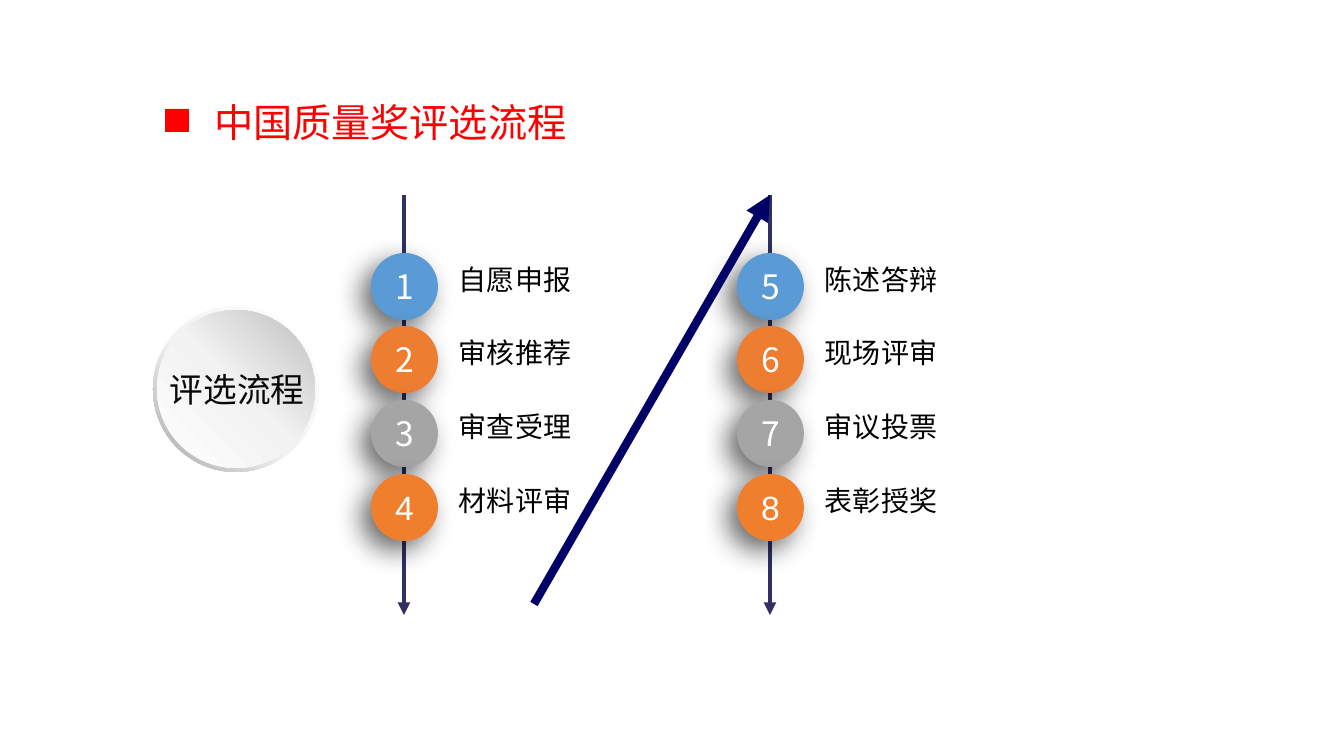
import pptx
import pptx.dml.color
import pptx.enum.shapes
import pptx.enum.text
import pptx.oxml
import pptx.oxml.ns
import pptx.util

PX = 914400 / 100.8
CJK = "Noto Sans CJK SC"
SHAPE = pptx.enum.shapes.MSO_SHAPE
ALIGN = pptx.enum.text.PP_ALIGN
ANCHOR = pptx.enum.text.MSO_ANCHOR
NS = pptx.oxml.ns.nsdecls("a")
STAGES = [("5B9BD5", CJK), ("ED7D31", CJK), ("A5A5A5", CJK), ("EF7E2D", "Arial")]


def px(*lengths):
    return [pptx.util.Emu(round(length * PX)) for length in lengths]


def rgb(value):
    return pptx.dml.color.RGBColor.from_string(value)


def write(shape, text, size, color, font=CJK, align=ALIGN.LEFT,
          anchor=ANCHOR.TOP, margins=(10, 0, 10, 0)):
    frame = shape.text_frame
    frame.word_wrap = True
    frame.auto_size = pptx.enum.text.MSO_AUTO_SIZE.NONE
    frame.vertical_anchor = anchor
    (frame.margin_left, frame.margin_top,
     frame.margin_right, frame.margin_bottom) = px(*margins)
    paragraph = frame.paragraphs[0]
    paragraph.alignment = align
    run = paragraph.add_run()
    run.text = text
    run.font.size = pptx.util.Pt(size)
    run.font.name = font
    run.font.color.rgb = rgb(color)
    run.font._element.append(
        pptx.oxml.parse_xml(f'<a:ea {NS} typeface="{CJK}"/>'))


def add_plain(slide, kind, box, color):
    shape = slide.shapes.add_shape(kind, *px(*box))
    shape.shadow.inherit = False
    shape.line.fill.background()
    shape.fill.solid()
    shape.fill.fore_color.rgb = rgb(color)
    return shape


def add_gradient(slide, kind, box, stops, angle):
    shape = add_plain(slide, kind, box, "FFFFFF")
    marks = "".join(
        f'<a:gs pos="{position * 1000}"><a:srgbClr val="{color}"/></a:gs>'
        for position, color in stops)
    gradient = pptx.oxml.parse_xml(
        f'<a:gradFill {NS} rotWithShape="1"><a:gsLst>{marks}</a:gsLst>'
        f'<a:lin ang="{angle * 60000}" scaled="0"/></a:gradFill>')
    properties = shape._element.spPr
    properties.replace(properties.find(pptx.oxml.ns.qn("a:solidFill")), gradient)
    return shape


def cast_shadow(shape):
    effects = shape._element.spPr.find(pptx.oxml.ns.qn("a:effectLst"))
    effects.append(pptx.oxml.parse_xml(
        f'<a:outerShdw {NS} blurRad="254000" dist="127000" dir="8100000" '
        'algn="tr" rotWithShape="0"><a:srgbClr val="000000">'
        '<a:alpha val="60000"/></a:srgbClr></a:outerShdw>'))


def add_arrow(slide, start, end, color, width):
    arrow = slide.shapes.add_connector(
        pptx.enum.shapes.MSO_CONNECTOR.STRAIGHT, *px(*start, *end))
    arrow.line.width = pptx.util.Pt(width)
    arrow.line.color.rgb = rgb(color)
    arrow.line._get_or_add_ln().append(
        pptx.oxml.parse_xml(f'<a:tailEnd {NS} type="triangle"/>'))
    arrow._element.spPr.append(pptx.oxml.parse_xml(f"<a:effectLst {NS}/>"))


def add_heading(slide, left, top, width, height):
    add_plain(slide, SHAPE.RECTANGLE, (left, top + 23, 24, 23), "FF0000")
    title = slide.shapes.title
    title.left, title.top, title.width, title.height = px(
        left + 21, top, width - 21, height)
    write(title, "中国质量奖评选流程", 28, "FF0000", margins=(28, 12, 10, 0))


def add_badge(slide, left, top, size):
    rim = add_gradient(slide, SHAPE.DONUT, (left, top, size, size),
                       [(0, "FFFFFF"), (55, "F2F2F2"), (100, "A6A6A6")], 135)
    rim.adjustments[0] = 0.05
    face = size - 8
    add_gradient(slide, SHAPE.OVAL, (left + 4, top + 4, face, face),
                 [(0, "FFFFFF"), (51, "F2F2F2"), (100, "BFBFBF")], 315)
    caption = slide.shapes.add_textbox(*px(left + 7, top + 63, size - 12, 40))
    write(caption, "评选流程", 24, "080808", align=ALIGN.CENTER,
          anchor=ANCHOR.MIDDLE, margins=(0, 0, 0, 0))


def add_steps(slide, left, top, height, first, labels):
    ball = 67
    axis = left + 33
    add_arrow(slide, (axis, top), (axis, top + height), "313065", 3)
    for index, (label, (color, font)) in enumerate(zip(labels, STAGES)):
        y = top + 58 + index * 221 // 3
        number = add_plain(slide, SHAPE.OVAL, (left, y, ball, ball), color)
        cast_shadow(number)
        write(number, str(first + index), 24, "FFFFFF", font=font,
              align=ALIGN.CENTER, anchor=ANCHOR.MIDDLE)
        step = slide.shapes.add_textbox(*px(left + 78, y + 10, 357, 47))
        write(step, label, 20, "000000")


def main():
    deck = pptx.Presentation()
    deck.slide_width, deck.slide_height = px(1344, 756)
    slide = deck.slides.add_slide(deck.slide_layouts.get_by_name("Title Only"))
    add_heading(slide, 165, 86, 1055, 68)
    add_badge(slide, 153, 306, 166)
    add_steps(slide, 371, 195, 420, 1,
              ["自愿申报", "审核推荐", "审查受理", "材料评审"])
    add_steps(slide, 737, 195, 420, 5,
              ["陈述答辩", "现场评审", "审议投票", "表彰授奖"])
    add_arrow(slide, (534, 604), (770, 195), "000066", 6)
    deck.save("out.pptx")


if __name__ == "__main__":
    main()
